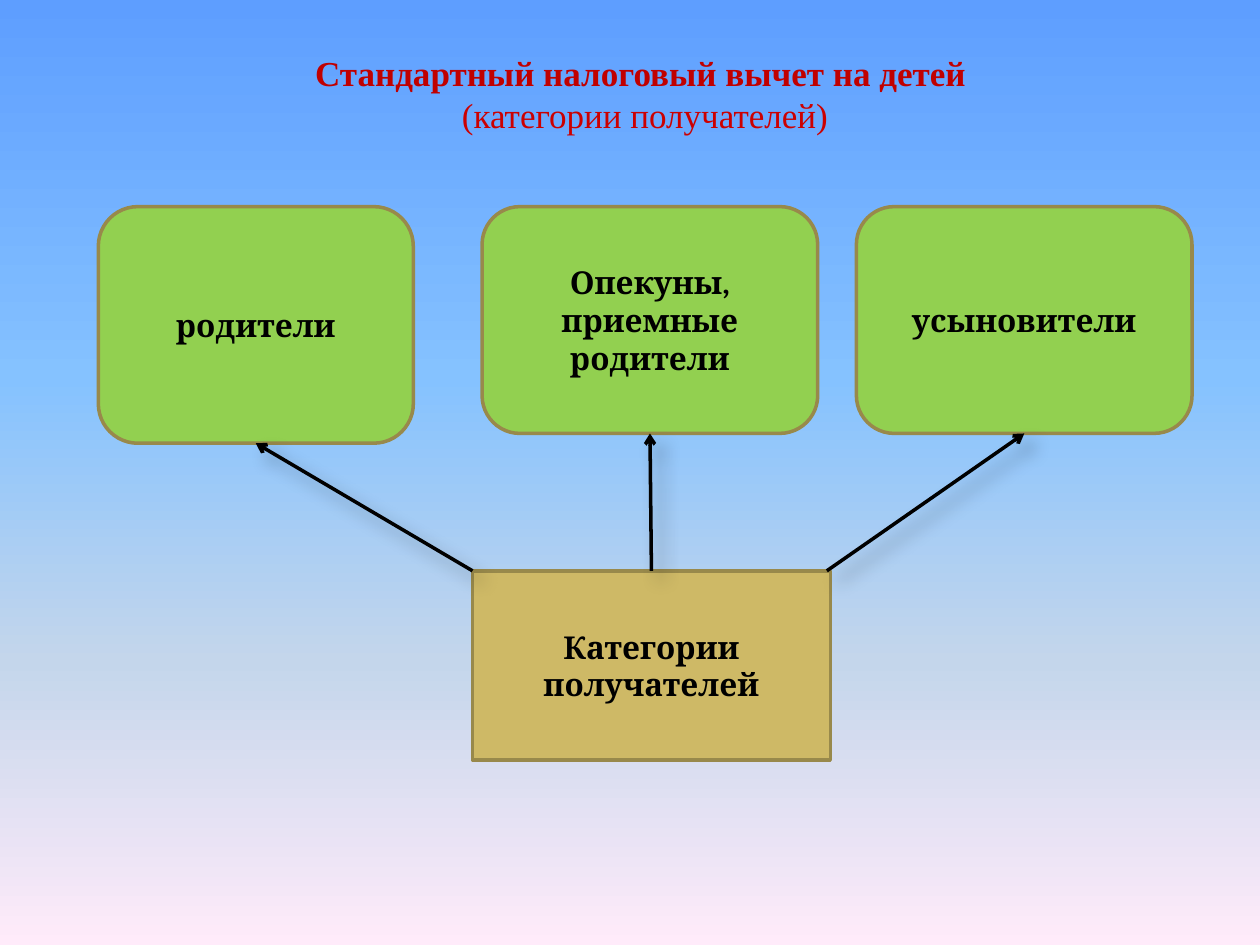
from lxml import etree
from pptx import Presentation
from pptx.dml.color import RGBColor
from pptx.enum.shapes import MSO_CONNECTOR, MSO_SHAPE
from pptx.enum.text import MSO_ANCHOR, PP_ALIGN
from pptx.oxml import parse_xml
from pptx.oxml.ns import nsdecls, qn
from pptx.util import Pt

RECT, ROUNDED = MSO_SHAPE.RECTANGLE, MSO_SHAPE.ROUNDED_RECTANGLE
STRAIGHT = MSO_CONNECTOR.STRAIGHT
CENTER, MIDDLE = PP_ALIGN.CENTER, MSO_ANCHOR.MIDDLE

COLORS = {
    "title": "C00000",
    "subtitle": "CC0000",
    "text": "000000",
    "recipient": "92D050",
    "root": "CEB966",
    "outline": "98894B",
    "arrow": "000000",
}
BACKGROUND = [(0, "5E9EFF"), (40, "85C2FF"), (70, "C4D6EB"), (100, "FFEBFA")]


def rgb(name):
    return RGBColor.from_string(COLORS[name])


def set_background(s):
    """Vertical gradient running from top to bottom."""
    fill = s.background.fill
    fill.gradient()
    fill.gradient_angle = 270
    stops = next(s.element.iter(qn("a:gsLst")))
    for stop in list(stops):
        stops.remove(stop)
    for percent, color in BACKGROUND:
        stop = etree.SubElement(stops, qn("a:gs"), pos=str(percent * 1000))
        etree.SubElement(stop, qn("a:srgbClr"), val=color)


def format_paragraph(p, text, font, size, color, bold):
    p.text = text
    p.alignment = CENTER
    p.font.name = font
    p.font.size = Pt(size)
    p.font.bold = bold
    p.font.color.rgb = rgb(color)


def add_title(s, x, y, w, h):
    tf = s.shapes.add_textbox(Pt(x), Pt(y), Pt(w), Pt(h)).text_frame
    tf.word_wrap = True
    font = "Times New Roman"
    format_paragraph(tf.paragraphs[0], "Стандартный налоговый вычет на детей ",
                     font, 20, "title", True)
    format_paragraph(tf.add_paragraph(), "(категории получателей)",
                     font, 20, "subtitle", False)


def add_box(s, kind, text, fill, x, y, w, h):
    sp = s.shapes.add_shape(kind, Pt(x), Pt(y), Pt(w), Pt(h))
    sp.shadow.inherit = False
    sp.fill.solid()
    sp.fill.fore_color.rgb = rgb(fill)
    sp.line.color.rgb = rgb("outline")
    sp.line.width = Pt(2)
    tf = sp.text_frame
    tf.word_wrap = True
    tf.vertical_anchor = MIDDLE
    format_paragraph(tf.paragraphs[0], text, "Cambria", 18, "text", True)


def add_arrow(s, x1, y1, x2, y2):
    """Line with an open arrowhead at its end and a soft shadow."""
    cn = s.shapes.add_connector(STRAIGHT, Pt(x1), Pt(y1), Pt(x2), Pt(y2))
    cn.line.color.rgb = rgb("arrow")
    cn.line.width = Pt(2)
    sp_pr = cn.element.spPr
    etree.SubElement(sp_pr.find(qn("a:ln")), qn("a:tailEnd"), type="arrow")
    sp_pr.append(parse_xml(
        f'<a:effectLst {nsdecls("a")}>'
        f'<a:outerShdw blurRad="{Pt(10.2)}" dist="{Pt(8)}" dir="{45 * 60000}"'
        ' algn="tl" rotWithShape="0">'
        f'<a:srgbClr val="{COLORS["arrow"]}"><a:alpha val="35000"/></a:srgbClr>'
        '</a:outerShdw></a:effectLst>'))


def main():
    prs = Presentation()
    prs.slide_width, prs.slide_height = Pt(720), Pt(540)
    s = prs.slides.add_slide(prs.slide_layouts[6])
    set_background(s)

    # Root box and title
    root_x, root_y, root_w = 270, 326.2, 204.5
    add_box(s, RECT, "Категории получателей", "root",
            root_x, root_y, root_w, 108)
    add_title(s, 87.8, 25.9, 561.6, 55.7)

    # Recipients, each with an arrow from the root box to its bottom centre
    top = 118.1
    recipients = [
        ("родители", 56.2, 180, 135.2, root_x),
        ("Опекуны, приемные родители", 275.5, 191.8, 129.6,
         root_x + root_w / 2),
        ("усыновители", 489.4, 191.8, 129.6, root_x + root_w - 2),
    ]
    for text, x, w, h, start_x in recipients:
        add_box(s, ROUNDED, text, "recipient", x, top, w, h)
        add_arrow(s, start_x, root_y, x + w / 2, top + h)

    prs.save("out.pptx")


if __name__ == "__main__":
    main()
